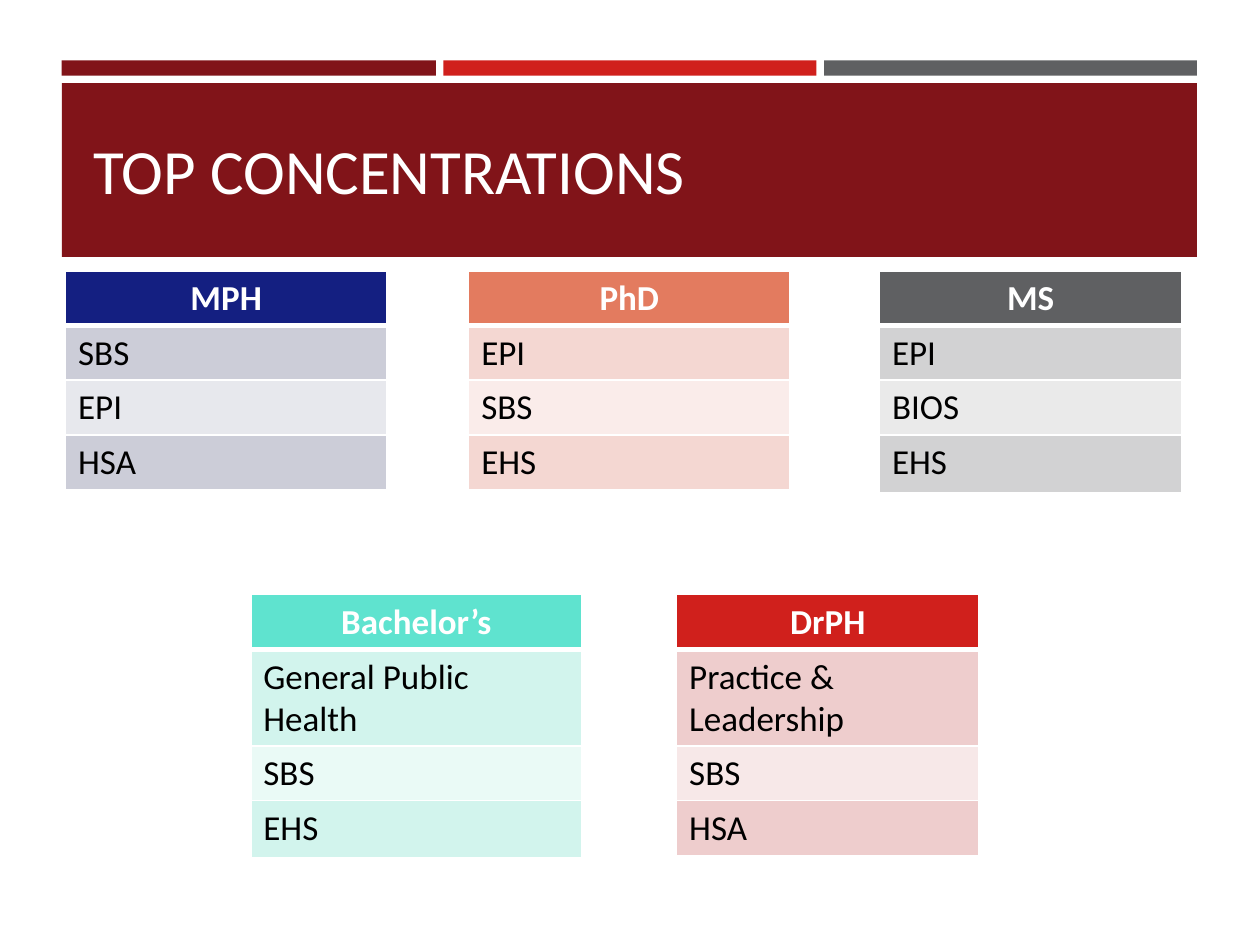
from pptx import Presentation
from pptx.util import Inches, Pt
from pptx.dml.color import RGBColor as RGB
from pptx.enum.shapes import MSO_SHAPE as Shape
from pptx.enum.text import MSO_ANCHOR as Anchor, PP_ALIGN as Align
from lxml import etree
from pptx.oxml.ns import qn

COLORS = {
    "white": "FFFFFF", "black": "000000", "maroon": "811419",
    "red": "D0201C", "gray": "5F6062", "navy": "141F81",
    "coral": "E37B5F", "teal": "5FE3CF",
    "navy mid": "CCCDD8", "navy pale": "E7E8ED",
    "coral mid": "F4D7D2", "coral pale": "FAECEA",
    "gray mid": "D2D2D3", "gray pale": "EAEAEA",
    "teal mid": "D2F4ED", "teal pale": "EAFAF6",
    "red mid": "EECDCD", "red pale": "F7E8E8",
}


def style(para, size, color, bold=False):
    font = para.font
    font.name = "Calibri"
    font.size = Pt(size)
    font.bold = bold
    font.color.rgb = RGB.from_string(COLORS[color])


def border(cell, top, bottom):
    props = cell._tc.get_or_add_tcPr()
    sides = [("a:lnL", 1), ("a:lnR", 1), ("a:lnT", top), ("a:lnB", bottom)]
    for spot, (tag, width) in enumerate(sides):
        line = etree.Element(qn(tag), w=str(Pt(width)))
        fill = etree.SubElement(line, qn("a:solidFill"))
        etree.SubElement(fill, qn("a:srgbClr"), val=COLORS["white"])
        props.insert(spot, line)


deck = Presentation()
deck.slide_width = Inches(10)
deck.slide_height = Inches(7.5)
slide = deck.slides.add_slide(deck.slide_layouts[6])

bars = [
    (0.49, 0.48, 2.97, 0.12, "maroon"),
    (3.52, 0.48, 2.96, 0.12, "red"),
    (6.54, 0.48, 2.96, 0.12, "gray"),
    (0.49, 0.66, 9.01, 1.38, "maroon"),
]
for *box, color in bars:
    bar = slide.shapes.add_shape(Shape.RECTANGLE, *map(Inches, box))
    bar.shadow.inherit = False
    bar.fill.solid()
    bar.fill.fore_color.rgb = RGB.from_string(COLORS[color])
    bar.line.fill.background()

title = slide.shapes.add_textbox(Inches(0.64), Inches(0.75), Inches(8.74), Inches(1.18))
frame = title.text_frame
frame.word_wrap = True
frame.vertical_anchor = Anchor.MIDDLE
frame.text = "TOP CONCENTRATIONS"
style(frame.paragraphs[0], 36, "white")

even = [0.41] * 4
tables = [
    (0.52, 2.15, 2.55, even, "navy", ["MPH", "SBS", "EPI", "HSA"]),
    (3.72, 2.15, 2.55, even, "coral", ["PhD", "EPI", "SBS", "EHS"]),
    (6.98, 2.15, 2.4, [0.42, 0.42, 0.42, 0.46], "gray", ["MS", "EPI", "BIOS", "EHS"]),
    (1.99, 4.72, 2.63, [0.36, 0.64, 0.36, 0.45], "teal",
     ["Bachelor’s", "General Public Health", "SBS", "EHS"]),
    (5.37, 4.72, 2.4, even, "red", ["DrPH", "Practice & Leadership", "SBS", "HSA"]),
]
for left, top, width, heights, hue, words in tables:
    table = slide.shapes.add_table(
        len(words), 1, Inches(left), Inches(top), Inches(width), Inches(sum(heights))
    ).table
    shades = [hue, f"{hue} mid", f"{hue} pale", f"{hue} mid"]
    for row, (word, shade, height) in enumerate(zip(words, shades, heights)):
        table.rows[row].height = Inches(height)
        cell = table.cell(row, 0)
        cell.text = word
        cell.fill.solid()
        cell.fill.fore_color.rgb = RGB.from_string(COLORS[shade])
        border(cell, 3 if row == 1 else 1, 3 if row == 0 else 1)
        para = cell.text_frame.paragraphs[0]
        head = row == 0
        para.alignment = Align.CENTER if head else Align.LEFT
        style(para, 20, "white" if head else "black", head)

deck.save("out.pptx")
